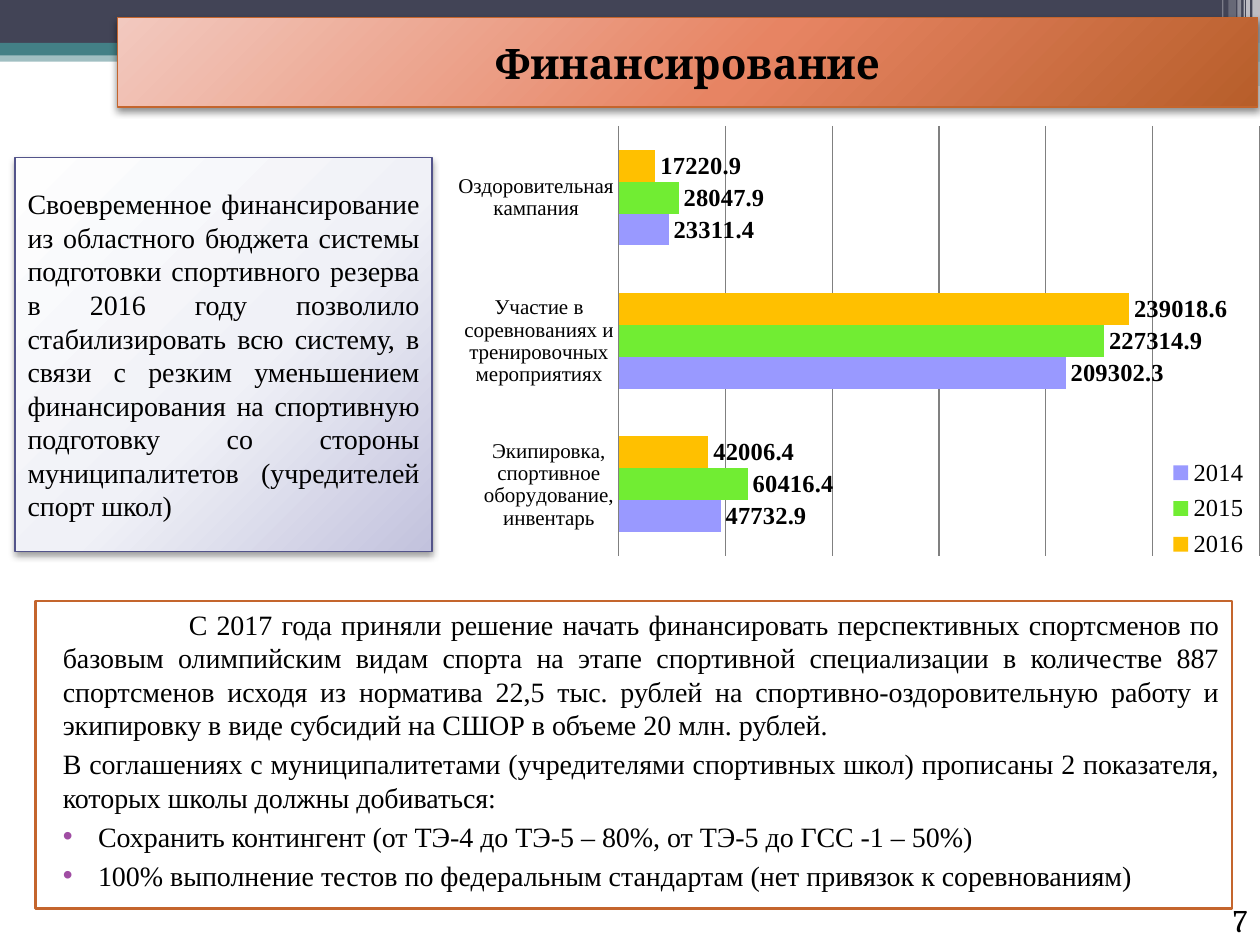
import pptx
import pptx.chart.data
import pptx.dml.color
import pptx.enum.chart
import pptx.enum.shapes
import pptx.enum.text
import pptx.oxml
import pptx.oxml.ns
import pptx.util
from dataclasses import dataclass

Inches, Pt = pptx.util.Inches, pptx.util.Pt
Align, Anchor = pptx.enum.text.PP_ALIGN, pptx.enum.text.MSO_ANCHOR
Kind = pptx.enum.shapes.MSO_SHAPE
qn = pptx.oxml.ns.qn


@dataclass
class Theme:
    serif: str = "Times New Roman"
    head: str = "Cambria"
    black: str = "000000"
    white: str = "FFFFFF"
    navy: str = "424456"
    teal: str = "438086"
    rust: str = "C4652D"
    edge: str = "53548A"
    dot: str = "A04DA3"
    grid: str = "808080"
    series: tuple = ("FFC000", "71ED33", "9999FF")
    lilac: tuple = ((0, "FEFEFE"), (55, "F0F1F7"), (100, "C2C2DD"))
    coral: tuple = ((0, "F2C9BF"), (55, "E78463"), (100, "B75E2A"))
    title: int = 24
    page: int = 18
    body: int = 16
    chart: int = 14
    axis: int = 12


theme = Theme()
CATS = ["Оздоровительная кампания",
        "Участие в соревнованиях и тренировочных мероприятиях",
        "Экипировка, спортивное оборудование, инвентарь"]
DATA = {"2016": (17220.9, 239018.6, 42006.4),
        "2015": (28047.9, 227314.9, 60416.4),
        "2014": (23311.4, 209302.3, 47732.9)}
NOTE = ("Своевременное финансирование из областного бюджета системы подготовки "
        "спортивного резерва в 2016 году позволило стабилизировать всю систему, "
        "в связи с резким уменьшением финансирования на спортивную подготовку "
        "со стороны муниципалитетов (учредителей спорт школ)")
PLANS = ["С 2017 года приняли решение начать финансировать перспективных спортсменов "
         "по базовым олимпийским видам спорта на этапе спортивной специализации в "
         "количестве 887 спортсменов исходя из норматива 22,5 тыс. рублей на "
         "спортивно-оздоровительную работу и экипировку в виде субсидий на СШОР "
         "в объеме 20 млн. рублей.",
         "В соглашениях с муниципалитетами (учредителями спортивных школ) прописаны "
         "2 показателя, которых школы должны добиваться:"]
GOALS = ["Сохранить контингент (от ТЭ-4 до ТЭ-5 – 80%, от ТЭ-5 до ГСС -1 – 50%)",
         "100% выполнение тестов по федеральным стандартам (нет привязок к соревнованиям)"]


def rgb(code):
    return pptx.dml.color.RGBColor.from_string(code)


def xml(text):
    space = pptx.oxml.ns.nsdecls("a", "c")
    return pptx.oxml.parse_xml(text.replace(">", f" {space}>", 1))


def style(font, **values):
    """Set font values; color is a hex code and size is in points."""
    font.color.rgb = rgb(values.pop("color", theme.black))
    font.size = Pt(values.pop("size"))
    for key, value in values.items():
        setattr(font, key, value)


def place(shape, box):
    for key, value in zip(("left", "top", "width", "height"), box):
        setattr(shape, key, Inches(value))


def block(slide, box, color, alpha=100, kind=Kind.RECTANGLE):
    shape = slide.shapes.add_shape(kind, *map(Inches, box))
    shape.shadow.inherit = False
    shape.fill.solid()
    shape.fill.fore_color.rgb = rgb(color)
    shape.line.fill.background()
    if alpha < 100:
        tint = shape._element.spPr.find(".//" + qn("a:srgbClr"))
        tint.append(xml(f'<a:alpha val="{alpha * 1000}"></a:alpha>'))
    return shape


def border(shape, color, width):
    shape.line.color.rgb = rgb(color)
    shape.line.width = Pt(width)


def glow(shape, stops, color, alpha):
    """Radial fill, thin border and soft shadow."""
    shape.fill.gradient()
    props = shape._element.spPr
    marks = "".join(f'<a:gs pos="{at * 1000}"><a:srgbClr val="{code}"/></a:gs>'
                    for at, code in stops)
    fill = xml(f'<a:gradFill rotWithShape="1"><a:gsLst>{marks}</a:gsLst>'
               '<a:path path="circle"><a:fillToRect l="-40000" t="-90000" '
               'r="140000" b="190000"/></a:path></a:gradFill>')
    props.replace(props.find(qn("a:gradFill")), fill)
    border(shape, color, 0.75)
    shape.shadow.inherit = False
    props.find(qn("a:effectLst")).append(xml(
        f'<a:outerShdw blurRad="{Pt(4)}" dist="{Pt(2)}" dir="5400000" '
        f'rotWithShape="0"><a:srgbClr val="{theme.black}">'
        f'<a:alpha val="{alpha * 1000}"/></a:srgbClr></a:outerShdw>'))


def write(shape, text, align, anchor, **values):
    frame = shape.text_frame
    frame.word_wrap = True
    frame.auto_size = pptx.enum.text.MSO_AUTO_SIZE.NONE
    frame.vertical_anchor = anchor
    para = frame.paragraphs[0]
    para.text, para.alignment = text, align
    style(para.runs[0].font, **values)


def header(slide, box):
    x, y, w, h = box
    # Horizontal bands
    for left, top, high, color, alpha in (
            (0, 0.4, 0.09, theme.teal, 50), (0, 0, 0.34, theme.navy, 100),
            (0, 0.34, 0.1, theme.teal, 100), (5.92, 0.39, 0.1, theme.teal, 100),
            (5.92, 0.48, 0.2, theme.teal, 50)):
        block(slide, (x + left, y + top, w - left, high), color, alpha)
    for left, top, wide, high in ((5.91, 0.54, 3.35, 0.03), (8.06, 0.64, 1.75, 0.04)):
        block(slide, (x + left, y + top, wide, high), theme.white,
              kind=Kind.ROUNDED_RECTANGLE)
    # Upright stripes at the right edge
    for left, wide, high, alpha in (
            (9.94, 0.06, h, 65), (9.89, 0.03, h, 65), (9.87, 0.01, h, 60),
            (9.82, 0.03, h, 40), (9.75, 0.06, 0.64, 20), (9.7, 0.01, 0.64, 30)):
        block(slide, (x + left, y, wide, high), theme.white, alpha)


def banner(slide, box):
    title = slide.shapes.title
    place(title, box)
    glow(title, theme.coral, theme.rust, 45)
    write(title, "Финансирование", Align.CENTER, Anchor.MIDDLE,
          size=theme.title, name=theme.head, bold=True)
    slide.shapes._spTree.append(title._element)  # bring to front


def note(slide, box):
    shape = block(slide, box, theme.white)
    glow(shape, theme.lilac, theme.edge, 40)
    write(shape, NOTE, Align.JUSTIFY, Anchor.MIDDLE, size=theme.body, name=theme.serif)


def plans(slide, box):
    shape = block(slide, box, theme.white)
    border(shape, theme.rust, 1.5)
    frame = shape.text_frame
    frame.word_wrap = True
    frame.vertical_anchor = Anchor.TOP
    for i, text in enumerate(PLANS + GOALS):
        para = frame.paragraphs[0] if i == 0 else frame.add_paragraph()
        goal = text in GOALS
        para.alignment = Align.LEFT if goal else Align.JUSTIFY
        para.space_before = Pt(3 if i else 0)
        props = para._p.get_or_add_pPr()
        first = -0.28 if goal else 1 if i == 0 else 0
        props.set("marL", str(Inches(0.4 if goal else 0.12)))
        props.set("indent", str(Inches(first)))
        if goal:
            props.append(xml(f'<a:buClr><a:srgbClr val="{theme.dot}"/></a:buClr>'))
            props.append(xml('<a:buFont typeface="Arial"></a:buFont>'))
            props.append(xml('<a:buChar char="•"></a:buChar>'))
        run = para.add_run()
        run.text = text
        style(run.font, size=theme.body, name=theme.serif)


def layout(x, y, w, h, inner=False):
    """Manual layout in shares of the chart area."""
    target = '<c:layoutTarget val="inner"/>' if inner else ""
    modes = "".join(f'<c:{k}Mode val="edge"/>' for k in "xy")
    sizes = "".join(f'<c:{k} val="{v}"/>' for k, v in zip("xywh", (x, y, w, h)))
    return xml(f"<c:layout><c:manualLayout>{target}{modes}{sizes}"
               "</c:manualLayout></c:layout>")


def bars(slide, box):
    data = pptx.chart.data.CategoryChartData()
    data.categories = CATS
    for name, values in DATA.items():
        data.add_series(name, values)
    enum = pptx.enum.chart
    chart = slide.shapes.add_chart(enum.XL_CHART_TYPE.BAR_CLUSTERED,
                                   *map(Inches, box), data).chart
    chart.has_title = False
    style(chart.font, size=theme.chart, name=theme.serif)
    # Axes
    cat, val = chart.category_axis, chart.value_axis
    cat.reverse_order = True
    cat.major_tick_mark = enum.XL_TICK_MARK.NONE
    cat.format.line.color.rgb = rgb(theme.grid)
    style(cat.tick_labels.font, size=theme.axis, name=theme.serif)
    val.visible, val.has_major_gridlines = False, True
    val.minimum_scale, val.maximum_scale, val.major_unit = 0, 300000, 50000
    val.major_gridlines.format.line.color.rgb = rgb(theme.grid)
    # Series and labels
    plot = chart.plots[0]
    plot.vary_by_categories, plot.gap_width, plot.overlap = False, 150, 0
    for series, color in zip(plot.series, theme.series):
        series.format.fill.solid()
        series.format.fill.fore_color.rgb = rgb(color)
        labels = series.data_labels
        labels.show_value = True
        labels.position = enum.XL_LABEL_POSITION.OUTSIDE_END
        style(labels.font, size=theme.chart, name=theme.serif, bold=True)
    # Legend and plot area
    chart.has_legend = True
    chart.legend.position = enum.XL_LEGEND_POSITION.RIGHT
    chart.legend.include_in_layout = False
    area = chart._chartSpace.chart.plotArea
    for old in area.findall(qn("c:layout")):
        area.remove(old)
    area.insert(0, layout(0.244, 0.063, 0.756, 0.896, inner=True))
    key = chart.legend._element
    for old in key.findall(qn("c:layout")):
        key.remove(old)
    key.find(qn("c:legendPos")).addnext(layout(0.88, 0.74, 0.12, 0.24))


def number(slide, box):
    shape = slide.shapes.add_textbox(*map(Inches, box))
    write(shape, "7", Align.RIGHT, Anchor.BOTTOM, size=theme.page, name=theme.head)


def main():
    deck = pptx.Presentation()
    deck.slide_width, deck.slide_height = Inches(10), Inches(7.5)
    slide = deck.slides.add_slide(deck.slide_layouts[5])
    header(slide, (0, 0, 10, 0.68))
    note(slide, (0.12, 1.25, 3.31, 3.13))
    plans(slide, (0.28, 4.77, 9.5, 2.44))
    bars(slide, (3.27, 0.76, 6.73, 3.81))
    number(slide, (9.17, 7.1, 0.83, 0.4))
    banner(slide, (0.93, 0.14, 9.05, 0.71))
    deck.save("out.pptx")


if __name__ == "__main__":
    main()
